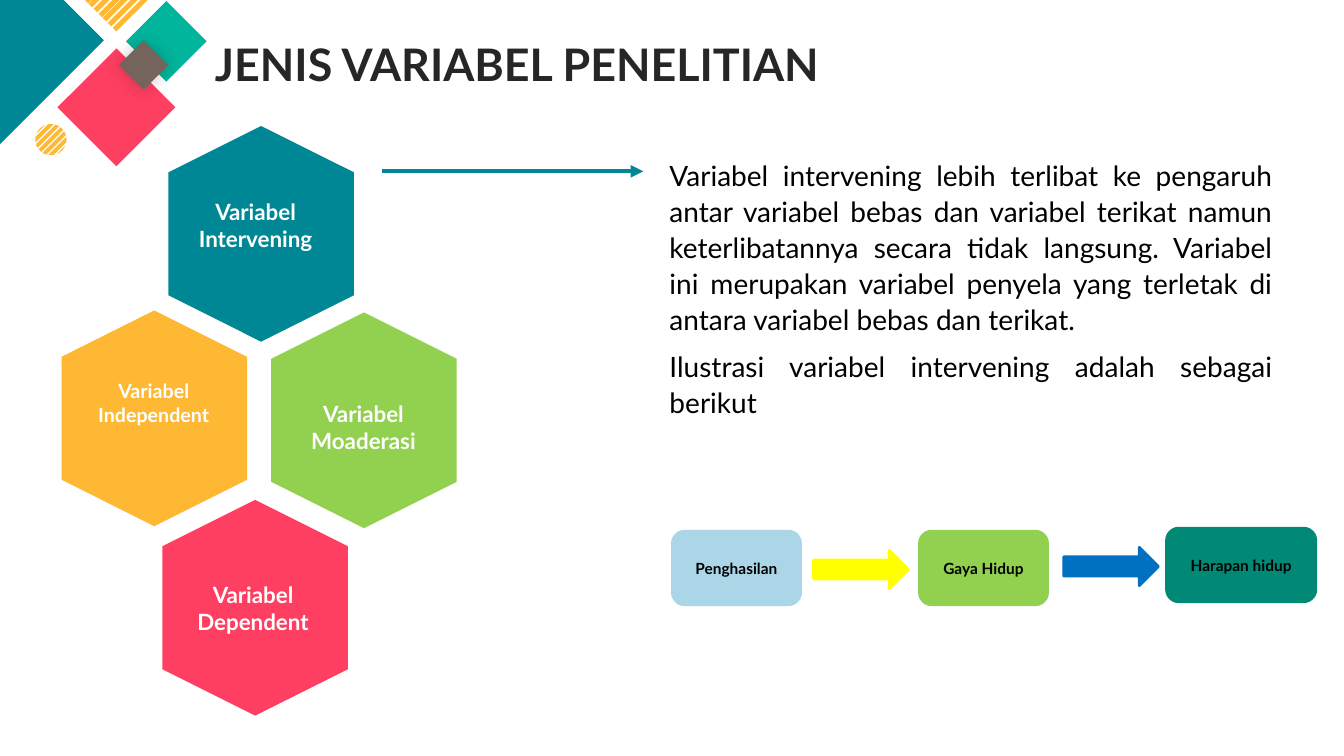
from math import sqrt

from lxml.etree import SubElement
from pptx import Presentation
from pptx.dml.color import RGBColor
from pptx.enum.shapes import MSO_CONNECTOR, MSO_SHAPE
from pptx.enum.text import MSO_ANCHOR, MSO_AUTO_SIZE, PP_ALIGN
from pptx.oxml.ns import qn
from pptx.util import Pt

SCALE = 9144  # EMU in one px, 100 px to the inch
FONT = "Lato"
TEAL, PINK, AMBER, GREEN = "008795", "FE3F61", "FEB834", "92D050"
WHITE, BLACK = "FFFFFF", "000000"

BODY = [
    "Variabel intervening lebih terlibat ke pengaruh antar variabel bebas dan "
    "variabel terikat namun keterlibatannya secara tidak langsung. Variabel ini "
    "merupakan variabel penyela yang terletak di antara variabel bebas dan terikat.",
    "Ilustrasi variabel intervening adalah sebagai berikut",
]

# hexagon left, top, fill; label box; label, size
CELLS = [
    (46, 323, AMBER, (75, 371, 155, 57), "Variabel Independent", 14),
    (146, 511, PINK, (177, 572, 148, 54), "Variabel Dependent", 16),
    (152, 140, TEAL, (176, 192, 155, 64), "Variabel Intervening", 16),
    (254, 325, GREEN, (283, 392, 155, 64), "Variabel Moaderasi", 16),
]

STEPS = [
    ((667, 527, 127, 73), "AAD6E7", "Penghasilan"),
    ((912, 527, 127, 73), GREEN, "Gaya Hidup"),
    ((1157, 524, 148, 73), "018976", "Harapan hidup"),
]
ARROWS = [((807, 546, 94, 38), "FFFF00"), ((1055, 543, 94, 38), "0070C0")]


def px(*sizes):
    return [round(size * SCALE) for size in sizes]


def rgb(code):
    return RGBColor.from_string(code)


def paint(shape, fill, edge=None):
    shape.shadow.inherit = False
    shape.fill.solid()
    shape.fill.fore_color.rgb = rgb(fill)
    if edge:
        shape.line.color.rgb = rgb(fill)
        shape.line.width = Pt(edge)
    else:
        shape.line.fill.background()


def add_form(slide, kind, box, fill, turn=0, edge=None):
    shape = slide.shapes.add_shape(kind, *px(*box))
    shape.rotation = turn
    paint(shape, fill, edge)
    return shape


def write(para, text, size, color, bold=True, align=PP_ALIGN.CENTER):
    para.text = text
    para.alignment = align
    font = para.font
    font.name, font.size, font.bold = FONT, Pt(size), bold
    font.color.rgb = rgb(color)


def place(holder, box):
    holder.left, holder.top, holder.width, holder.height = px(*box)
    holder.text_frame.auto_size = MSO_AUTO_SIZE.NONE
    return holder.text_frame


def add_glow(shape):
    """Add a soft, centred shadow."""
    effects = shape._element.spPr.find(qn("a:effectLst"))
    outer = SubElement(effects, qn("a:outerShdw"), blurRad=str(Pt(13)),
                       dist="0", algn="ctr", rotWithShape="0")
    tint = SubElement(outer, qn("a:srgbClr"), val=BLACK)
    SubElement(tint, qn("a:alpha"), val="21000")


def add_disc(slide, x, y, radius, gap, width):
    """Draw a round dot cut into slanted stripes."""
    def spot(off, run):
        return px(x + (off - run) / sqrt(2), y + (off + run) / sqrt(2))

    pen = None
    for step in range(-3, 4):
        low = max(step * gap - width / 2, -radius)
        high = min(step * gap + width / 2, radius)
        mid = (low + high) / 2
        half = [(off, sqrt(radius ** 2 - off ** 2)) for off in (low, mid, high)]
        ring = [spot(off, run) for off, run in half]
        ring += [spot(off, -run) for off, run in reversed(half)]
        if pen is None:
            pen = slide.shapes.build_freeform(*ring[0])
        else:
            pen.move_to(*ring[0])
        pen.add_line_segments(ring[1:], close=True)
    paint(pen.convert_to_shape(), AMBER)


def add_corner(slide):
    diamond = MSO_SHAPE.DIAMOND
    add_form(slide, diamond, (-105, -64, 208, 208), TEAL)
    add_form(slide, diamond, (57, 48, 117, 117), PINK)
    for bar in range(7):
        move = bar * 14 // 3
        add_form(slide, MSO_SHAPE.RECTANGLE, (99 + move, move - 37, 5, 45), AMBER, 45)
    add_form(slide, diamond, (125, 1, 80, 80), "01B59C")
    add_glow(add_form(slide, diamond, (118, 40, 49, 49), "75645C"))
    add_disc(slide, 50.5, 138.5, 15.5, 5.4, 3.8)


def add_cell(slide, left, top, fill, box, text, size):
    add_form(slide, MSO_SHAPE.HEXAGON, (left, top, 214, 184), fill, 90)
    frame = slide.shapes.add_textbox(*px(*box)).text_frame
    frame.word_wrap = True
    write(frame.paragraphs[0], text, size, WHITE)


def add_step(slide, box, fill, text):
    frame = add_form(slide, MSO_SHAPE.ROUNDED_RECTANGLE, box, fill, edge=2).text_frame
    frame.word_wrap = True
    frame.vertical_anchor = MSO_ANCHOR.MIDDLE
    write(frame.paragraphs[0], text, 11, BLACK)


def add_pointer(slide):
    line = slide.shapes.add_connector(MSO_CONNECTOR.STRAIGHT, *px(379, 170, 638, 170))
    line.line.color.rgb = rgb(TEAL)
    line.line.width = Pt(3)
    SubElement(line.line._get_or_add_ln(), qn("a:tailEnd"), type="triangle")
    SubElement(line._element.spPr, qn("a:effectLst"))


def fill_body(holder):
    frame = place(holder, (634, 150, 638, 309))
    for index, text in enumerate(BODY):
        para = frame.add_paragraph() if index else frame.paragraphs[0]
        write(para, text, 20, BLACK, False, PP_ALIGN.JUSTIFY)
        para.line_spacing = 1.07
        para.space_before, para.space_after = Pt(0), Pt(8)
        props = para._p.get_or_add_pPr()
        props.set("marL", str(px(20)[0]))
        props.set("indent", "0")
        SubElement(props, qn("a:buNone"))
        props.append(props.find(qn("a:defRPr")))


def main():
    deck = Presentation()
    deck.slide_width, deck.slide_height = px(1333, 750)
    slide = deck.slides.add_slide(deck.slide_layouts[1])
    title = place(slide.shapes.title, (203, 31, 620, 64))
    title.word_wrap = False
    write(title.paragraphs[0], "JENIS VARIABEL PENELITIAN", 32, "262626")
    fill_body(slide.placeholders[1])
    add_corner(slide)
    for cell in CELLS:
        add_cell(slide, *cell)
    add_pointer(slide)
    for step in STEPS:
        add_step(slide, *step)
    for box, fill in ARROWS:
        add_form(slide, MSO_SHAPE.RIGHT_ARROW, box, fill, edge=2)
    deck.save("out.pptx")


if __name__ == "__main__":
    main()
